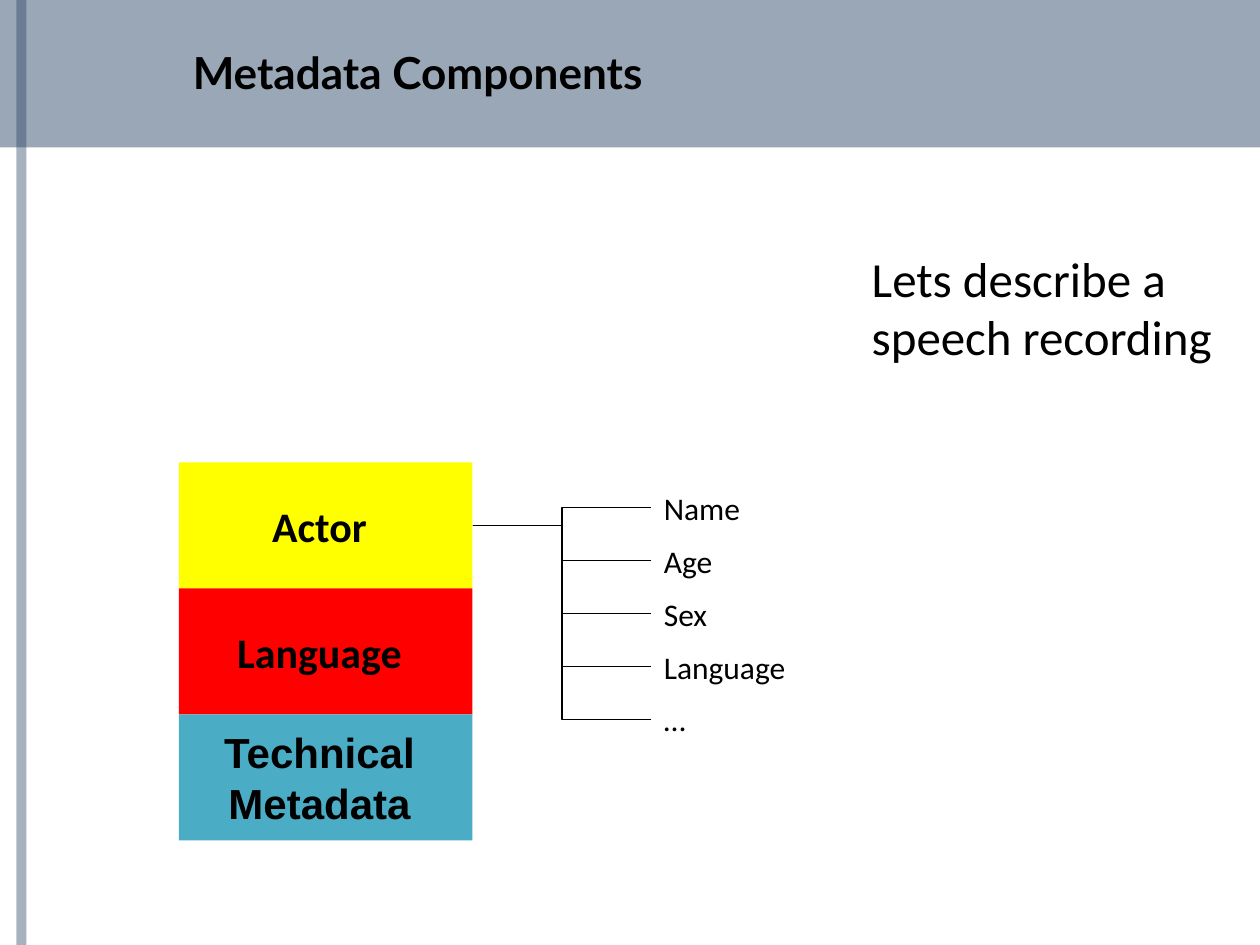
from dataclasses import dataclass

from lxml import etree
from pptx import Presentation
from pptx.dml.color import RGBColor
from pptx.enum.shapes import MSO_CONNECTOR, MSO_SHAPE
from pptx.enum.text import MSO_ANCHOR, MSO_AUTO_SIZE, PP_ALIGN
from pptx.oxml.ns import qn
from pptx.util import Inches, Pt


@dataclass(frozen=True)
class Theme:
    ink: RGBColor = RGBColor(0x00, 0x00, 0x00)
    band: RGBColor = RGBColor(0x25, 0x40, 0x61)
    actor: RGBColor = RGBColor(0xFF, 0xFF, 0x00)
    language: RGBColor = RGBColor(0xFF, 0x00, 0x00)
    technical: RGBColor = RGBColor(0x4B, 0xAC, 0xC6)
    title_font: str = "Lato"
    body_font: str = "Calibri"
    technical_font: str = "Arial"
    title_size: float = 25.2
    note_size: float = 28
    component_size: float = 24
    field_size: float = 18
    line_width: float = 0.75


THEME = Theme()


def write_lines(frame, lines, font, size, bold=False, align=PP_ALIGN.LEFT):
    frame.text = "\n".join(lines)
    for paragraph in frame.paragraphs:
        paragraph.alignment = align
        paragraph.font.name = font
        paragraph.font.size = Pt(size)
        paragraph.font.bold = bold
        paragraph.font.color.rgb = THEME.ink


def add_block(slide, box, color):
    shape = slide.shapes.add_shape(MSO_SHAPE.RECTANGLE, *map(Inches, box))
    shape.shadow.inherit = False
    shape.fill.solid()
    shape.fill.fore_color.rgb = color
    shape.line.fill.background()
    return shape


def add_band(slide, box, opacity):
    band = add_block(slide, box, THEME.band)
    color = band.fill._xPr.find(".//" + qn("a:srgbClr"))
    etree.SubElement(color, qn("a:alpha"), val=str(opacity * 1000))


def add_label(slide, box, lines, size):
    label = slide.shapes.add_textbox(*map(Inches, box))
    label.text_frame.word_wrap = False
    label.text_frame.auto_size = MSO_AUTO_SIZE.SHAPE_TO_FIT_TEXT
    write_lines(label.text_frame, lines, THEME.body_font, size)
    return label


def place_title(slide, box, text):
    title = slide.shapes.title
    title.left, title.top, title.width, title.height = map(Inches, box)
    title.text_frame.vertical_anchor = MSO_ANCHOR.MIDDLE
    title.text_frame.auto_size = MSO_AUTO_SIZE.NONE
    write_lines(title.text_frame, [text], THEME.title_font, THEME.title_size, bold=True)
    slide.shapes._spTree.append(title._element)


def add_components(slide, box, components):
    left, top, width, height = box
    row_height = height / len(components)
    blocks = []
    for row, (lines, color, font) in enumerate(components):
        block = add_block(slide, (left, top + row * row_height, width, row_height), color)
        frame = block.text_frame
        frame.margin_left = 0
        frame.vertical_anchor = MSO_ANCHOR.MIDDLE
        write_lines(frame, lines, font, THEME.component_size, True, PP_ALIGN.CENTER)
        blocks.append(block)
    return blocks


def connect(slide, source, target):
    connector = slide.shapes.add_connector(
        MSO_CONNECTOR.ELBOW,
        source.left + source.width, source.top + source.height // 2,
        target.left, target.top + target.height // 2,
    )
    connector.begin_connect(source, 3)
    connector.end_connect(target, 1)
    connector.line.color.rgb = THEME.ink
    connector.line.width = Pt(THEME.line_width)
    etree.SubElement(connector._element.spPr, qn("a:effectLst"))


def add_fields(slide, box, source, fields):
    left, top, width, height = box
    label_height = 0.4
    pitch = (height - label_height) / (len(fields) - 1)
    for row, field in enumerate(fields):
        label_box = (left, top + row * pitch, width, label_height)
        label = add_label(slide, label_box, [field], THEME.field_size)
        connect(slide, source, label)


def build_slide(presentation):
    slide = presentation.slides.add_slide(presentation.slide_layouts[5])
    add_band(slide, (0, 0, 10, 1.17), 46)
    add_band(slide, (0.13, 0, 0.08, 7.5), 40)
    place_title(slide, (1.43, 0.3, 7.01, 0.54), "Metadata Components")
    actor, *_ = add_components(slide, (1.42, 3.67, 2.33, 3), [
        (["Actor"], THEME.actor, THEME.body_font),
        (["Language"], THEME.language, THEME.body_font),
        (["Technical", "Metadata"], THEME.technical, THEME.technical_font),
    ])
    add_fields(slide, (5.17, 3.83, 1.32, 2.08), actor,
               ["Name", "Age", "Sex", "Language", "…"])
    add_label(slide, (6.82, 1.92, 3.21, 1.04),
              ["Lets describe a", "speech recording"], THEME.note_size)


def main():
    presentation = Presentation()
    presentation.slide_width = Inches(10)
    presentation.slide_height = Inches(7.5)
    build_slide(presentation)
    presentation.save("out.pptx")


if __name__ == "__main__":
    main()
